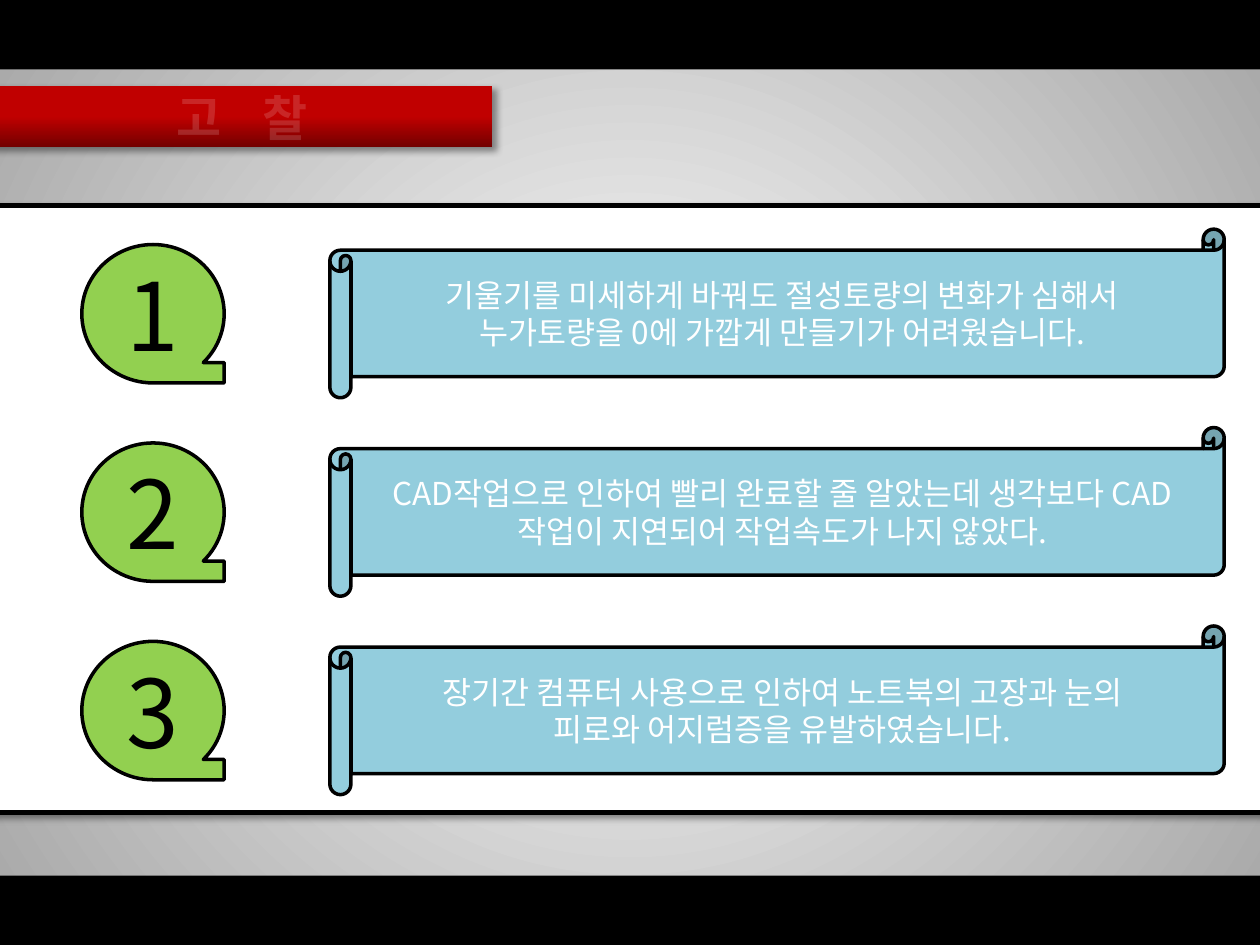
"""Build the review slide: a title ribbon and three numbered scrolls."""
from lxml import etree
from pptx import Presentation
from pptx.dml.color import RGBColor
from pptx.enum import shapes, text
from pptx.oxml import parse_xml
from pptx.oxml.ns import nsdecls, qn
from pptx.util import Cm, Pt

TITLE = "고\t찰"
ITEMS = [
    "기울기를 미세하게 바꿔도 절성토량의 변화가 심해서\n누가토량을 0에 가깝게 만들기가 어려웠습니다.",
    "CAD작업으로 인하여 빨리 완료할 줄 알았는데 생각보다 CAD작업이 지연되어 작업속도가 나지 않았다.",
    "장기간 컴퓨터 사용으로 인하여 노트북의 고장과 눈의\n피로와 어지럼증을 유발하였습니다.",
]
FONT = "Noto Sans CJK KR"
COLORS = {"black": "000000", "white": "FFFFFF", "grey": "A6A6A6", "red": "C00000",
          "dark": "720000", "green": "92D050", "blue": "93CDDD"}
WIDE, HIGH, BAR, PITCH = 25.4, 19.05, 1.4, 4
KIND = shapes.MSO_SHAPE
ROUND = '<a:path path="circle"><a:fillToRect l="50000" t="50000" r="50000" b="50000"/></a:path>'
UPWARD = '<a:lin ang="16200000" scaled="0"/>'


def rgb(name):
    return RGBColor.from_string(COLORS[name])


def draw(slide, kind, box, fill, line=0):
    shape = slide.shapes.add_shape(kind, *map(Cm, box))
    shape.fill.solid()
    shape.fill.fore_color.rgb = rgb(fill)
    if line:
        shape.line.color.rgb = rgb("black")
        shape.line.width = Pt(line)
    else:
        shape.line.fill.background()
    shape.shadow.inherit = False
    return shape


def blend(shape, stops, shade):
    marks = "".join(f'<a:gs pos="{pos * 1000}"><a:srgbClr val="{COLORS[name]}"/></a:gs>'
                    for pos, name in stops)
    props = shape._element.spPr
    props.replace(props.find(qn("a:solidFill")), parse_xml(
        f'<a:gradFill {nsdecls("a")} rotWithShape="1"><a:gsLst>{marks}</a:gsLst>{shade}</a:gradFill>'))


def cast(shape):
    shape._element.spPr.find(qn("a:effectLst")).append(parse_xml(
        f'<a:outerShdw {nsdecls("a")} blurRad="{Pt(4)}" dist="{Pt(3)}" dir="2700000" algn="tl" '
        f'rotWithShape="0"><a:srgbClr val="{COLORS["black"]}"><a:alpha val="40000"/>'
        '</a:srgbClr></a:outerShdw>'))


def write(shape, words, size, color, align=text.PP_ALIGN.CENTER):
    frame = shape.text_frame
    frame.text = words
    frame.word_wrap = True
    frame.vertical_anchor = text.MSO_ANCHOR.MIDDLE
    for para in frame.paragraphs:
        para.alignment = align
        for run in para.runs:
            run.font.size = Pt(size)
            run.font.name = FONT
            run.font.color.rgb = rgb(color)
            etree.SubElement(run.font._element, qn("a:ea"), typeface=FONT)


def head(slide):
    title = slide.shapes.title
    slide.shapes._spTree.append(title._element)
    title.left, title.top, title.width, title.height = map(Cm, (3.55, 1.63, 4, 1.45))
    write(title, TITLE, 28, "white", text.PP_ALIGN.LEFT)
    frame = title.text_frame
    frame.margin_left = frame.margin_right = 0
    frame.auto_size = text.MSO_AUTO_SIZE.NONE
    para = frame.paragraphs[0]
    tabs = etree.SubElement(para._p.get_or_add_pPr(), qn("a:tabLst"))
    etree.SubElement(tabs, qn("a:tab"), pos=str(Cm(1.75)), algn="l")
    font = para.runs[0].font
    font.bold = True
    props = font._element
    tint = props.find(qn("a:solidFill"))
    etree.SubElement(tint[0], qn("a:alpha"), val="15000")
    edge = parse_xml(f'<a:ln {nsdecls("a")} w="{Pt(0.25)}"/>')
    edge.append(parse_xml(etree.tostring(tint)))
    props.insert(0, edge)


def main():
    deck = Presentation()
    deck.slide_width, deck.slide_height = Cm(WIDE), Cm(HIGH)
    slide = deck.slides.add_slide(deck.slide_layouts[5])
    back = draw(slide, KIND.RECTANGLE, (0, 0, WIDE, HIGH), "white")
    blend(back, [(0, "white"), (100, "grey")], ROUND)
    for top in (0, HIGH - BAR):
        draw(slide, KIND.RECTANGLE, (0, top, WIDE, BAR), "black")
    ribbon = draw(slide, KIND.RECTANGLE, (-0.79, 1.73, 10.72, 1.24), "red")
    blend(ribbon, [(0, "dark"), (50, "red"), (100, "red")], UPWARD)
    cast(ribbon)
    head(slide)
    cast(draw(slide, KIND.RECTANGLE, (-0.61, 4.14, 26.62, 12.24), "white", 3))
    for row, words in enumerate(ITEMS):
        drop = row * PITCH
        badge = draw(slide, KIND.FLOWCHART_SEQUENTIAL_ACCESS_STORAGE,
                     (1.65, 4.93 + drop, 2.87, 2.79), "green", 2)
        write(badge, str(row + 1), 54, "black")
        scroll = draw(slide, KIND.HORIZONTAL_SCROLL, (6.65, 4.62 + drop, 18.03, 3.4), "blue", 2)
        write(scroll, words, 18, "white")
    deck.save("out.pptx")


if __name__ == "__main__":
    main()
